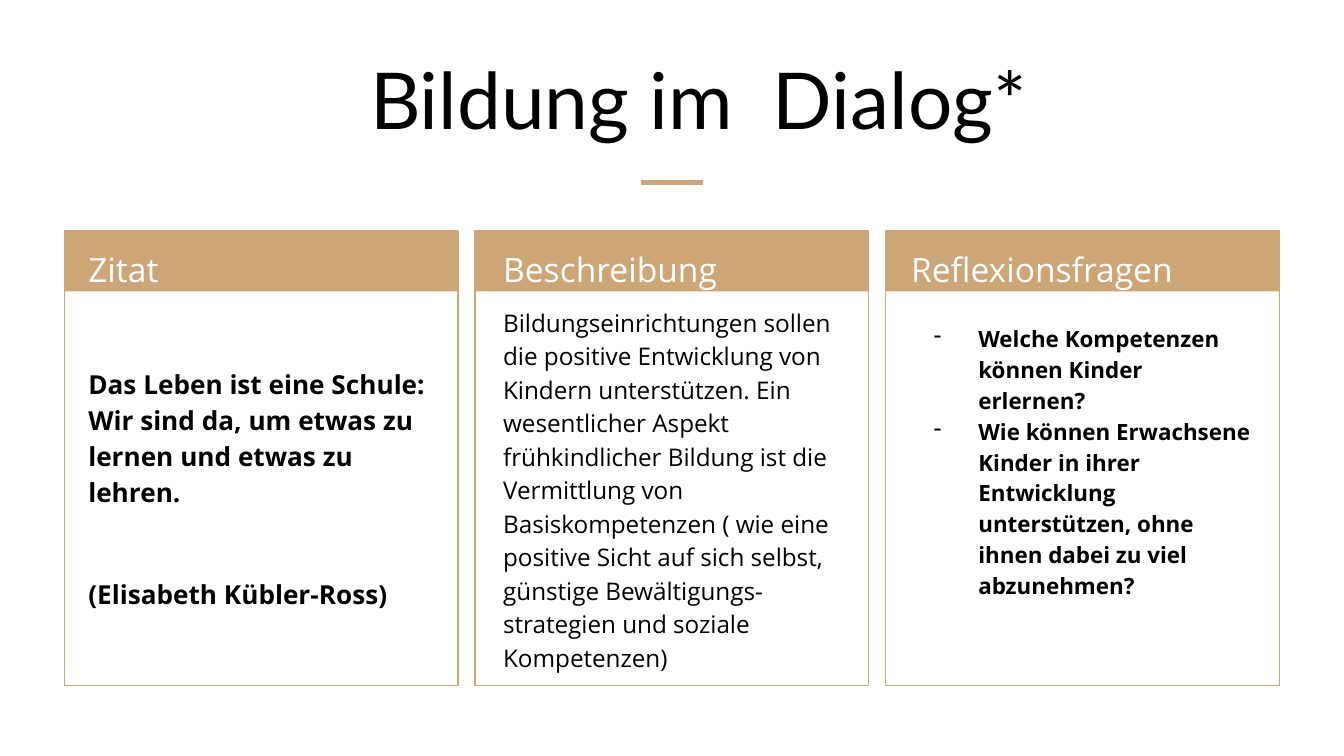
from dataclasses import dataclass

from lxml import etree
from pptx import Presentation
from pptx.dml.color import RGBColor
from pptx.enum.shapes import MSO_CONNECTOR, MSO_SHAPE
from pptx.enum.text import MSO_ANCHOR, PP_ALIGN
from pptx.oxml.ns import qn
from pptx.util import Cm, Pt

RECTANGLE = MSO_SHAPE.RECTANGLE
STRAIGHT = MSO_CONNECTOR.STRAIGHT
TOP, BOTTOM = MSO_ANCHOR.TOP, MSO_ANCHOR.BOTTOM
CENTER = PP_ALIGN.CENTER


@dataclass(frozen=True)
class Theme:
    accent: RGBColor = RGBColor(0xCC, 0xA6, 0x77)
    ink: RGBColor = RGBColor(0, 0, 0)
    paper: RGBColor = RGBColor(0xFF, 0xFF, 0xFF)
    title_font: str = "Lato"
    text_font: str = "Open Sans"
    title_size: float = 42
    heading_size: float = 18
    line_spacing: float = 1.15
    border: float = 0.75
    rule: float = 2.25


THEME = Theme()

TITLE = "Bildung im  Dialog*"

# Lengths in cm; text_inset is measured from the card's left edge
CARDS = [
    {
        "heading": "Zitat",
        "body": [
            "Das Leben ist eine Schule: Wir sind da, um etwas zu lernen "
            "und etwas zu lehren.",
            "(Elisabeth Kübler-Ross)",
        ],
        "size": 14, "bold": True, "dashes": False, "gap": 35,
        "text_inset": 0.2, "body_top": 6.63, "body_height": 7.11,
    },
    {
        "heading": "Beschreibung",
        "body": [
            "Bildungseinrichtungen sollen die positive Entwicklung von Kindern "
            "unterstützen. Ein wesentlicher Aspekt frühkindlicher Bildung ist "
            "die Vermittlung von Basiskompetenzen ( wie eine positive Sicht auf "
            "sich selbst, günstige Bewältigungs- strategien und soziale "
            "Kompetenzen)",
        ],
        "size": 13, "bold": False, "dashes": False, "gap": 0,
        "text_inset": 0.28, "body_top": 5.49, "body_height": 8.59,
    },
    {
        "heading": "Reflexionsfragen",
        "body": [
            "Welche Kompetenzen können Kinder erlernen?",
            "Wie können Erwachsene Kinder in ihrer Entwicklung unterstützen, "
            "ohne ihnen dabei zu viel abzunehmen?",
        ],
        "size": 12, "bold": True, "dashes": True, "gap": 0,
        "text_inset": 0.23, "body_top": 5.82, "body_height": 7.95,
    },
]

SLIDE_WIDTH, SLIDE_HEIGHT = 25.4, 14.29
CARD_LEFT, CARD_TOP, CARD_PITCH = 1.22, 4.37, 7.76
CARD_WIDTH, CARD_HEIGHT, HEADER_HEIGHT = 7.44, 8.59, 1.14
TEXT_WIDTH, HEADING_TOP = 6.92, 4.34
RULE_WIDTH, RULE_TOP = 1.16, 3.45


def add_box(slide, left, top, width, height, filled):
    box = slide.shapes.add_shape(RECTANGLE, Cm(left), Cm(top), Cm(width), Cm(height))
    box.shadow.inherit = False
    if filled:
        box.fill.solid()
        box.fill.fore_color.rgb = THEME.accent
        box.line.fill.background()
    else:
        box.fill.background()
        box.line.color.rgb = THEME.accent
        box.line.width = Pt(THEME.border)


def add_text(slide, place, paragraphs, font, size, color, bold=False, anchor=TOP):
    """Add a wrapped text box and return its paragraphs for further layout."""
    frame = slide.shapes.add_textbox(*(Cm(length) for length in place)).text_frame
    frame.word_wrap = True
    frame.vertical_anchor = anchor
    frame.margin_left = frame.margin_right = Cm(0.25)
    frame.margin_top = frame.margin_bottom = Cm(0.25)
    frame.text = "\n".join(paragraphs)
    for paragraph in frame.paragraphs:
        for run in paragraph.runs:
            run.font.name = font
            run.font.size = Pt(size)
            run.font.bold = bold
            run.font.color.rgb = color
    return frame.paragraphs


def indent(paragraph, left, first=0):
    properties = paragraph._p.get_or_add_pPr()
    properties.set("marL", str(Cm(left)))
    properties.set("indent", str(Cm(first)))
    return properties


def add_dash(paragraph):
    properties = indent(paragraph, 1.27, -0.84)
    color = etree.SubElement(properties, qn("a:buClr"))
    etree.SubElement(color, qn("a:srgbClr"), val=str(THEME.ink))
    etree.SubElement(properties, qn("a:buChar"), char="-")


def add_title(slide):
    title, = add_text(slide, (0.86, 0.69, 23.67, 2.31), [TITLE], THEME.title_font,
                      THEME.title_size, THEME.ink, anchor=BOTTOM)
    title.alignment = CENTER
    indent(title, 1)


def add_rule(slide):
    left = (SLIDE_WIDTH - RULE_WIDTH) / 2
    rule = slide.shapes.add_connector(STRAIGHT, Cm(left), Cm(RULE_TOP),
                                      Cm(left + RULE_WIDTH), Cm(RULE_TOP))
    rule.line.color.rgb = THEME.accent
    rule.line.width = Pt(THEME.rule)
    etree.SubElement(rule._element.spPr, qn("a:effectLst"))


def add_card(slide, card, left):
    add_box(slide, left, CARD_TOP, CARD_WIDTH, CARD_HEIGHT, filled=False)
    add_box(slide, left, CARD_TOP, CARD_WIDTH, HEADER_HEIGHT, filled=True)

    text_left = left + card["text_inset"]
    heading, = add_text(slide, (text_left, HEADING_TOP, TEXT_WIDTH, HEADER_HEIGHT),
                        [card["heading"]], THEME.text_font, THEME.heading_size,
                        THEME.paper)
    heading.line_spacing = THEME.line_spacing

    body = add_text(slide, (text_left, card["body_top"], TEXT_WIDTH, card["body_height"]),
                    card["body"], THEME.text_font, card["size"], THEME.ink, card["bold"])
    for number, paragraph in enumerate(body):
        paragraph.line_spacing = THEME.line_spacing
        paragraph.space_before = Pt(card["gap"] if number else 0)
        if card["dashes"]:
            add_dash(paragraph)


def main():
    presentation = Presentation()
    presentation.slide_width = Cm(SLIDE_WIDTH)
    presentation.slide_height = Cm(SLIDE_HEIGHT)
    slide = presentation.slides.add_slide(presentation.slide_layouts[6])

    add_title(slide)
    add_rule(slide)
    for column, card in enumerate(CARDS):
        add_card(slide, card, CARD_LEFT + column * CARD_PITCH)

    presentation.save("out.pptx")


if __name__ == "__main__":
    main()
